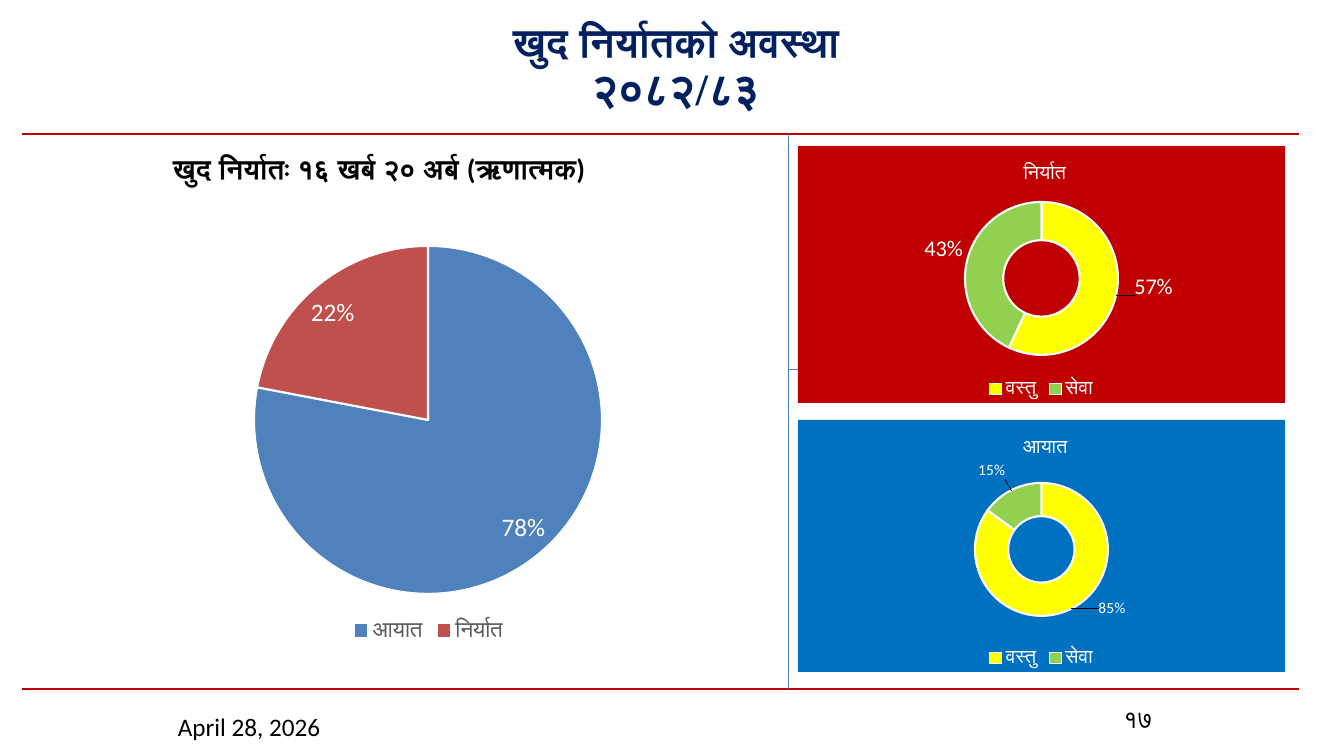
from copy import deepcopy

from pptx import Presentation
from pptx.chart.data import CategoryChartData
from pptx.dml.color import RGBColor
from pptx.enum.chart import XL_CHART_TYPE as ChartType
from pptx.enum.chart import XL_LABEL_POSITION as LabelPosition
from pptx.enum.chart import XL_LEGEND_POSITION as LegendPosition
from pptx.enum.shapes import MSO_CONNECTOR as Connector
from pptx.enum.text import MSO_ANCHOR as Anchor
from pptx.enum.text import PP_ALIGN as Align
from pptx.oxml import parse_xml
from pptx.oxml.ns import nsdecls
from pptx.oxml.xmlchemy import OxmlElement
from pptx.util import Pt

NAVY = RGBColor(0x00, 0x20, 0x60)
BLACK = RGBColor(0x00, 0x00, 0x00)
WHITE = RGBColor(0xFF, 0xFF, 0xFF)
GRAY = RGBColor(0x59, 0x59, 0x59)
RED = RGBColor(0xC0, 0x00, 0x00)
BLUE = RGBColor(0x00, 0x70, 0xC0)
DIVIDER_BLUE = RGBColor(0x4B, 0x7E, 0xBC)
SLICE_BLUE = RGBColor(0x4F, 0x81, 0xBD)
SLICE_RED = RGBColor(0xC0, 0x50, 0x4D)
YELLOW = RGBColor(0xFF, 0xFF, 0x00)
GREEN = RGBColor(0x92, 0xD0, 0x50)

PX = 914400 / 100.8
SLIDE_SIZE = (1344, 756)

HEADING_BOX = (302, 17, 748, 104)
HEADING = [("खुद निर्यातको अवस्था", 29), ("२०८२/८३", 32)]

TEXTS = [
    ((168, 706, 219, 41), "April 28, 2026", 18, "Calibri", False, Align.LEFT),
    ((1109, 698, 58, 48), "१७", 18, "Roboto", False, Align.CENTER),
    ((163, 147, 626, 44), "खुद निर्यातः १६ खर्ब २० अर्ब (ऋणात्मक)", 20, "Calibri", True, Align.LEFT),
]

RULES = [
    ((22, 134, 1299, 134), RED, 1.5),
    ((22, 689, 1299, 689), RED, 1.5),
    ((789, 134, 789, 689), DIVIDER_BLUE, 0.75),
    ((789, 370, 1167, 370), DIVIDER_BLUE, 0.75),
]

GOODS_SERVICES = [("वस्तु", YELLOW), ("सेवा", GREEN)]
CHARTS = [
    dict(kind=ChartType.PIE, box=(126, 231, 605, 415), plot=(128, 15, 348, 348),
         slices=[("आयात", SLICE_BLUE), ("निर्यात", SLICE_RED)], values=(78, 22),
         label_size=18, legend=(16, GRAY)),
    dict(kind=ChartType.DOUGHNUT, box=(798, 420, 487, 252), plot=(177, 63, 133, 133),
         slices=GOODS_SERVICES, values=(85, 15), label_size=11, legend=(14, WHITE),
         title="आयात", title_at=(221, 12), fill=BLUE, hole=75,
         label_shifts=[(48, 14), (-27, -35)]),
    dict(kind=ChartType.DOUGHNUT, box=(798, 146, 487, 257), plot=(167, 56, 153, 153),
         slices=GOODS_SERVICES, values=(57, 43), label_size=16, legend=(14, WHITE),
         title="निर्यात", title_at=(222, 12), fill=RED, hole=50,
         label_shifts=[(56, -4), (-42, -17)]),
]


def emu(lengths):
    """Turn px lengths into EMU."""
    return [round(length * PX) for length in lengths]


def style(font, size, color, face="Calibri", bold=False):
    """Set the look of a font."""
    font.size, font.name, font.bold = Pt(size), face, bold
    font.color.rgb = color


def add_rule(slide, ends, color, width):
    """Draw a straight line without a shadow."""
    rule = slide.shapes.add_connector(Connector.STRAIGHT, *emu(ends))
    rule.line.color.rgb = color
    rule.line.width = Pt(width)
    rule._element.spPr.append(OxmlElement("a:effectLst"))


def add_heading(slide):
    """Place the two-line title."""
    title = slide.shapes.title
    title.left, title.top, title.width, title.height = emu(HEADING_BOX)
    frame = title.text_frame
    frame.vertical_anchor = Anchor.MIDDLE
    paragraph = frame.paragraphs[0]
    paragraph.alignment = Align.CENTER
    paragraph.line_spacing = 0.9
    for index, (line, size) in enumerate(HEADING):
        if index:
            paragraph.add_line_break()
        run = paragraph.add_run()
        run.text = line
        style(run.font, size, NAVY, "Times New Roman", True)


def add_text(slide, box, words, size, face, bold, align):
    """Add a one-line text box."""
    frame = slide.shapes.add_textbox(*emu(box)).text_frame
    frame.word_wrap = True
    paragraph = frame.paragraphs[0]
    paragraph.alignment = align
    run = paragraph.add_run()
    run.text = words
    style(run.font, size, BLACK, face, bold)


def layout(chart_box, place, modes=""):
    """Make a manual layout from px within a chart."""
    parts = "".join(
        f'<c:{name} val="{length / whole:.4f}"/>'
        for name, length, whole in zip("xywh", place, chart_box[2:] * 2))
    return parse_xml(f'<c:layout {nsdecls("c")}><c:manualLayout>{modes}{parts}'
                     '</c:manualLayout></c:layout>')


def replace_layout(parent, new, index):
    """Swap the layout of a chart part."""
    for old in parent.xpath("./c:layout"):
        parent.remove(old)
    parent.insert(index, new)


def shift_labels(series, box, shifts):
    """Move each label away from its slice."""
    labels = series._element.xpath("./c:dLbls")[0]
    shared = [part for part in labels if not part.tag.endswith("showLeaderLines")]
    for index, shift in enumerate(shifts):
        label = parse_xml(f'<c:dLbl {nsdecls("c")}><c:idx val="{index}"/></c:dLbl>')
        label.append(layout(box, shift))
        label.extend(deepcopy(shared))
        labels.insert(index, label)


def add_share_chart(slide, kind, box, plot, slices, values, label_size, legend,
                    title=None, title_at=None, fill=None, hole=None, label_shifts=()):
    """Add a pie or doughnut of percentages."""
    data = CategoryChartData()
    data.categories = [name for name, _ in slices]
    data.add_series("Series 1", values)
    chart = slide.shapes.add_chart(kind, *emu(box), data).chart
    style(chart.font, 10, BLACK)
    space = chart._chartSpace
    modes = ('<c:layoutTarget val="inner"/><c:xMode val="edge"/><c:yMode val="edge"/>')
    replace_layout(space.xpath(".//c:plotArea")[0], layout(box, plot, modes), 0)

    chart.has_title = title is not None
    if title:
        run = chart.chart_title.text_frame.paragraphs[0].add_run()
        run.text = title
        style(run.font, 14, WHITE)
        edges = '<c:xMode val="edge"/><c:yMode val="edge"/>'
        replace_layout(space.xpath(".//c:title")[0], layout(box, title_at, edges), 1)
    chart.has_legend = True
    chart.legend.position = LegendPosition.BOTTOM
    chart.legend.include_in_layout = False
    style(chart.legend.font, *legend)

    chart.plots[0].vary_by_categories = True
    series = chart.plots[0].series[0]
    for index, (_, color) in enumerate(slices):
        slice_format = series.points[index].format
        slice_format.fill.solid()
        slice_format.fill.fore_color.rgb = color
        slice_format.line.color.rgb = WHITE
        slice_format.line.width = Pt(1.5)
    labels = series.data_labels
    labels.show_percentage, labels.show_value = True, False
    labels.number_format, labels.number_format_is_linked = "0%", False
    style(labels.font, label_size, WHITE)
    if kind == ChartType.PIE:
        labels.position = LabelPosition.BEST_FIT
    shift_labels(series, box, label_shifts)

    if hole:
        space.xpath(".//c:holeSize")[0].set("val", str(hole))
    if fill:
        space.xpath("./c:chart")[0].addnext(parse_xml(
            f'<c:spPr {nsdecls("c", "a")}><a:solidFill><a:srgbClr val="{fill}"/>'
            '</a:solidFill><a:ln><a:noFill/></a:ln></c:spPr>'))


def main():
    """Build the net export slide."""
    deck = Presentation()
    deck.slide_width, deck.slide_height = emu(SLIDE_SIZE)
    slide = deck.slides.add_slide(deck.slide_layouts[5])
    add_heading(slide)
    for text in TEXTS:
        add_text(slide, *text)
    for rule in RULES:
        add_rule(slide, *rule)
    for chart in CHARTS:
        add_share_chart(slide, **chart)
    deck.save("out.pptx")


if __name__ == "__main__":
    main()
